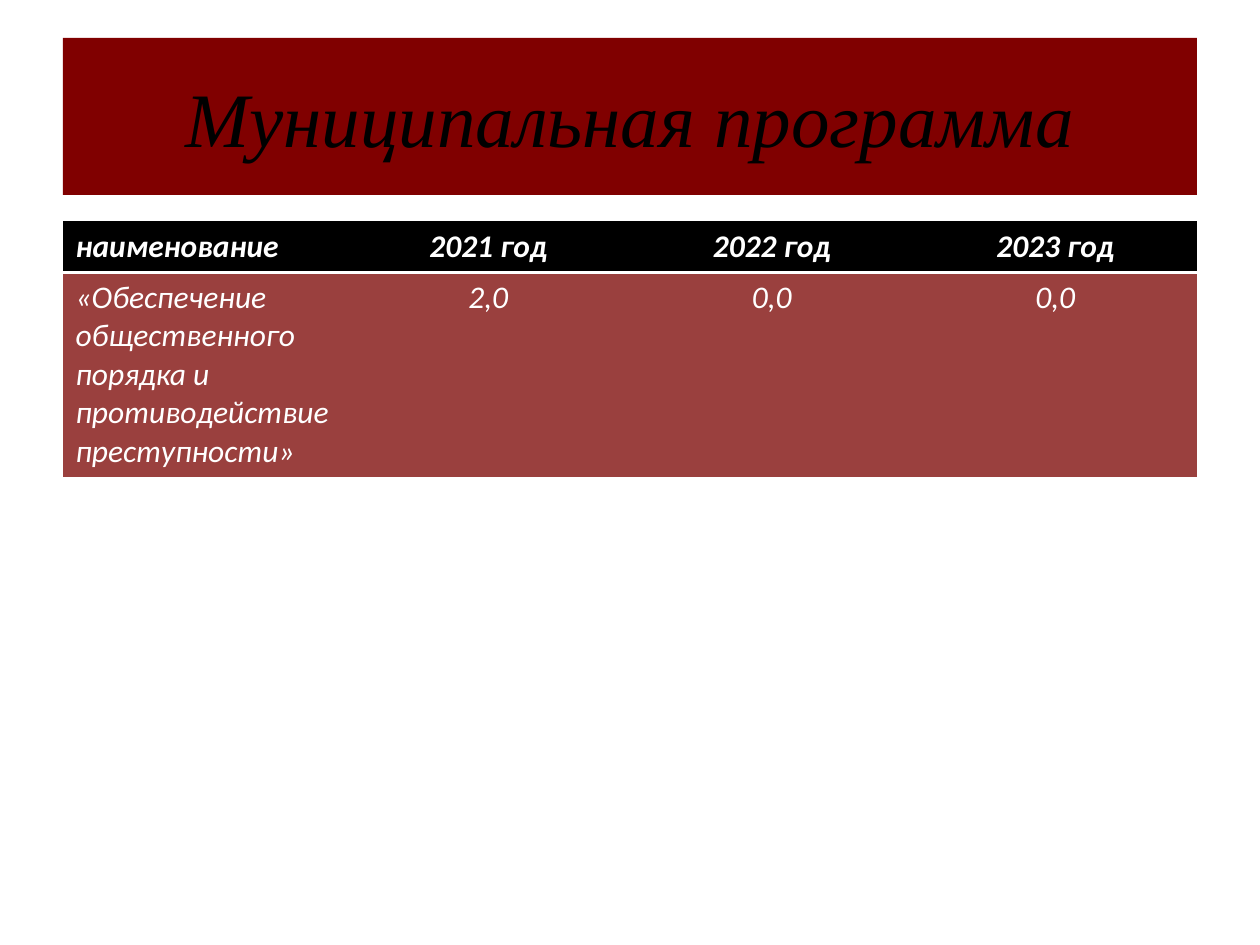
from lxml.etree import SubElement
from pptx import Presentation
from pptx.dml.color import RGBColor
from pptx.enum.shapes import MSO_SHAPE
from pptx.enum.text import MSO_ANCHOR, PP_ALIGN
from pptx.oxml import parse_xml
from pptx.oxml.ns import nsdecls, qn
from pptx.util import Pt

PX_PER_INCH = 126
NO_GRID_STYLE = "{2D5ABB26-0587-4C30-8999-92F81FD0307C}"


def px(length):
    return round(length * 914400 / PX_PER_INCH)


def color(value):
    return RGBColor.from_string(value)


class SlideBuilder:
    title_font = "Times New Roman"
    body_font = "Calibri"
    banner_fill = "800000"
    header_fill = "000000"
    row_fill = "9A403E"
    dark = "000000"
    light = "FFFFFF"

    def __init__(self, slide):
        self.slide = slide

    def paint(self, target, fill):
        target.fill.solid()
        target.fill.fore_color.rgb = color(fill)

    def set_text(self, text_frame, text, font, size, ink, align, bold=False):
        text_frame.text = text
        paragraph = text_frame.paragraphs[0]
        paragraph.alignment = align
        for run in paragraph.runs:
            run.font.name = font
            run.font.size = Pt(size)
            run.font.color.rgb = color(ink)
            run.font.italic = True
            run.font.bold = bold

    def banner(self, text, left, top, width, height):
        shape = self.slide.shapes.add_shape(
            MSO_SHAPE.RECTANGLE, px(left), px(top), px(width), px(height))
        shape.shadow.inherit = False
        shape.line.fill.background()
        self.paint(shape, self.banner_fill)
        shape.text_frame.word_wrap = True
        shape.text_frame.vertical_anchor = MSO_ANCHOR.MIDDLE
        self.set_text(shape.text_frame, text, self.title_font, 44, self.dark,
                      PP_ALIGN.CENTER)

    def bottom_border(self, cell, points):
        border = parse_xml(f'<a:lnB {nsdecls("a")} w="{Pt(points)}"/>')
        fill = SubElement(border, qn("a:solidFill"))
        SubElement(fill, qn("a:srgbClr"), val=self.light)
        cell._tc.get_or_add_tcPr().insert(0, border)

    def table(self, rows, left, top, width, row_heights):
        frame = self.slide.shapes.add_table(
            len(rows), len(rows[0]), px(left), px(top), px(width),
            px(sum(row_heights)))
        table = frame.table
        table._tbl.tblPr.find(qn("a:tableStyleId")).text = NO_GRID_STYLE
        for row_index, (texts, height) in enumerate(zip(rows, row_heights)):
            table.rows[row_index].height = px(height)
            is_header = row_index == 0
            for column_index, text in enumerate(texts):
                cell = table.cell(row_index, column_index)
                self.paint(cell, self.header_fill if is_header else self.row_fill)
                align = PP_ALIGN.CENTER if column_index else PP_ALIGN.LEFT
                self.set_text(cell.text_frame, text, self.body_font, 18, self.light,
                              align, bold=is_header)
                if is_header:
                    self.bottom_border(cell, 2)


def main():
    presentation = Presentation()
    presentation.slide_width = px(1260)
    presentation.slide_height = px(945)
    slide = presentation.slides.add_slide(presentation.slide_layouts[6])
    builder = SlideBuilder(slide)
    builder.banner("Муниципальная программа", 63, 38, 1134, 157)
    builder.table(
        [
            ["наименование", "2021 год", "2022 год", "2023 год"],
            ["«Обеспечение общественного порядка и противодействие преступности»",
             "2,0", "0,0", "0,0"],
        ],
        63, 221, 1134, [51, 202])
    presentation.save("out.pptx")


if __name__ == "__main__":
    main()
